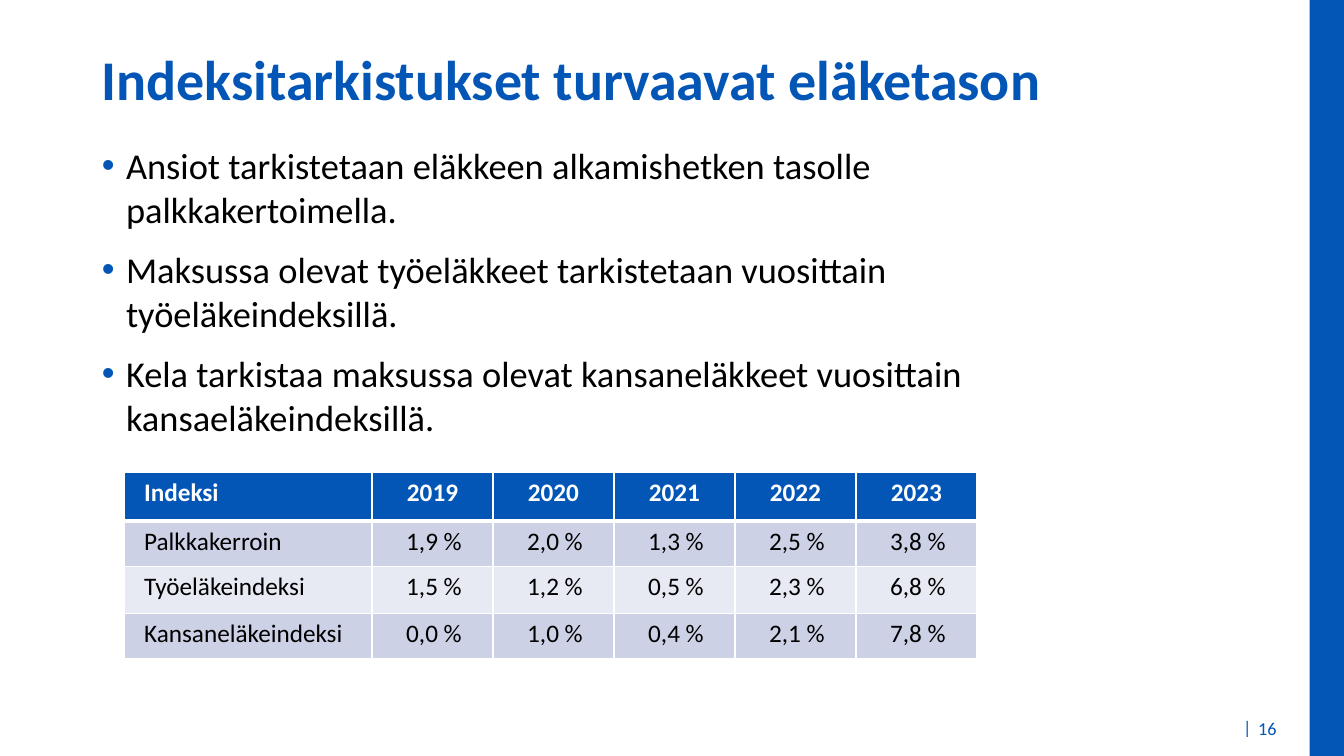
from lxml import etree
from pptx import Presentation
from pptx.dml.color import RGBColor
from pptx.enum.shapes import MSO_SHAPE
from pptx.enum.text import MSO_ANCHOR, MSO_AUTO_SIZE, PP_ALIGN
from pptx.oxml.ns import qn
from pptx.util import Inches, Pt

RECT = MSO_SHAPE.RECTANGLE
TOP, MIDDLE = MSO_ANCHOR.TOP, MSO_ANCHOR.MIDDLE
FIXED = MSO_AUTO_SIZE.NONE
LEFT, CENTER, RIGHT = PP_ALIGN.LEFT, PP_ALIGN.CENTER, PP_ALIGN.RIGHT

COLORS = {"blue": "0356B5", "white": "FFFFFF", "black": "000000",
          "dark": "CCD1E5", "light": "E7E9F3"}


def style(par, size, color, bold=False, align=LEFT):
    par.alignment = align
    par.font.name = "Calibri"
    par.font.size = Pt(size)
    par.font.bold = bold
    par.font.color.rgb = RGBColor.from_string(COLORS[color])


def border(cell, side, width):
    line = etree.SubElement(cell._tc.get_or_add_tcPr(), qn("a:" + side), w=str(Pt(width)))
    fill = etree.SubElement(line, qn("a:solidFill"))
    etree.SubElement(fill, qn("a:srgbClr"), val=COLORS["white"])


deck = Presentation()
deck.slide_width, deck.slide_height = Inches(13.33), Inches(7.5)
slide = deck.slides.add_slide(deck.slide_layouts[1])
shapes = slide.shapes

# Side band
band = shapes.add_shape(RECT, Inches(12.99), 0, Inches(0.35), Inches(7.5))
band.shadow.inherit = False
band.fill.solid()
band.fill.fore_color.rgb = RGBColor.from_string(COLORS["blue"])
band.line.fill.background()

# Page number
for text, x, y, width, anchor in (("|", 12.23, 7.06, 0.29, TOP),
                                  ("16", 12.38, 7.05, 0.44, MIDDLE)):
    box = shapes.add_textbox(Inches(x), Inches(y), Inches(width), Inches(0.35))
    box.text_frame.word_wrap = text != "|"
    box.text_frame.vertical_anchor = anchor
    box.text_frame.text = text
    style(box.text_frame.paragraphs[0], 13, "blue")

# Title and body frames
title, body = shapes.title, slide.placeholders[1]
for holder, y, height in ((title, 0.39, 0.97), (body, 1.37, 3.09)):
    holder.left, holder.top = Inches(0.91), Inches(y)
    holder.width, holder.height = Inches(10.43), Inches(height)
    holder.text_frame.vertical_anchor = TOP
    holder.text_frame.auto_size = FIXED
title.text_frame.text = "Indeksitarkistukset turvaavat eläketason"
style(title.text_frame.paragraphs[0], 40, "blue", True)

# Bullets
points = ["Ansiot tarkistetaan eläkkeen alkamishetken tasolle palkkakertoimella.",
          "Maksussa olevat työeläkkeet tarkistetaan vuosittain työeläkeindeksillä.",
          "Kela tarkistaa maksussa olevat kansaneläkkeet vuosittain kansaeläkeindeksillä."]
body.text_frame.text = "\n".join(points)
for par in body.text_frame.paragraphs:
    props = par._p.get_or_add_pPr()
    props.set("marL", str(Inches(0.24)))
    props.set("indent", str(Inches(-0.24)))
    tint = etree.SubElement(props, qn("a:buClr"))
    etree.SubElement(tint, qn("a:srgbClr"), val=COLORS["blue"])
    etree.SubElement(props, qn("a:buFont"), typeface="Arial")
    etree.SubElement(props, qn("a:buChar"), char="•")
    par.space_before, par.space_after = Pt(0), Pt(12)
    style(par, 26, "black")

# Index table
rows = [["Indeksi", "2019", "2020", "2021", "2022", "2023"],
        ["Palkkakerroin", "1,9 %", "2,0 %", "1,3 %", "2,5 %", "3,8 %"],
        ["Työeläkeindeksi", "1,5 %", "1,2 %", "0,5 %", "2,3 %", "6,8 %"],
        ["Kansaneläkeindeksi", "0,0 %", "1,0 %", "0,4 %", "2,1 %", "7,8 %"]]
heights = [0.48, 0.45, 0.47, 0.44]
fills = ["blue", "dark", "light", "dark"]
table = shapes.add_table(4, 6, Inches(1.23), Inches(4.69),
                         Inches(8.46), Inches(1.83)).table
for c, col in enumerate(table.columns):
    col.width = Inches(1.2 if c else 2.46)
for r, row in enumerate(rows):
    table.rows[r].height = Inches(heights[r])
    head = r == 0
    for c, text in enumerate(row):
        cell = table.cell(r, c)
        cell.text = text
        cell.margin_left = Inches(0.08 if c else 0.2)
        cell.margin_right = Inches(0.08 if head or c == 0 else 0.31)
        cell.margin_top = cell.margin_bottom = Inches(0.05)
        for side in ("lnL", "lnR", "lnT", "lnB"):
            thick = (head and side == "lnB") or (r == 1 and side == "lnT")
            border(cell, side, 3 if thick else 1)
        cell.fill.solid()
        cell.fill.fore_color.rgb = RGBColor.from_string(COLORS[fills[r]])
        align = LEFT if c == 0 else CENTER if head else RIGHT
        style(cell.text_frame.paragraphs[0], 18, "white" if head else "black", head, align)

deck.save("out.pptx")
